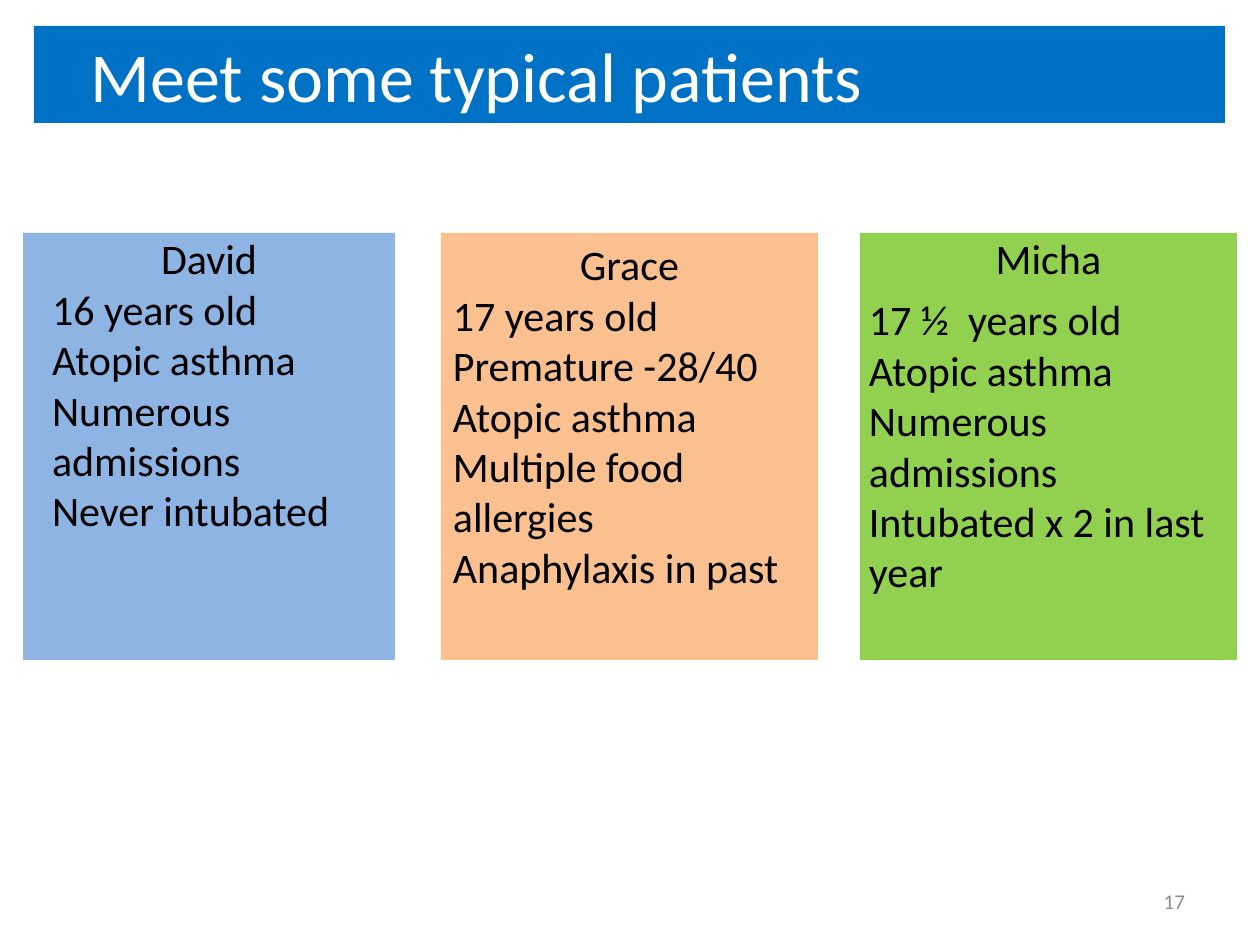
"""Build a slide with a title bar and three patient cards."""
from pptx import Presentation
from pptx.dml.color import RGBColor
from pptx.enum.shapes import MSO_SHAPE
from pptx.enum.text import MSO_ANCHOR, PP_ALIGN
from pptx.util import Pt

RECT = MSO_SHAPE.RECTANGLE
TOP, MIDDLE = MSO_ANCHOR.TOP, MSO_ANCHOR.MIDDLE
LEFT, CENTER, RIGHT = PP_ALIGN.LEFT, PP_ALIGN.CENTER, PP_ALIGN.RIGHT


def px(n):
    return round(n * 914400 / 126)


def add_box(s, box, fill, anchor, inset, lines, size, color):
    sp = s.shapes.add_shape(RECT, *[px(n) for n in box])
    sp.shadow.inherit = False
    sp.line.fill.background()
    if fill:
        sp.fill.solid()
        sp.fill.fore_color.rgb = RGBColor.from_string(fill)
    else:
        sp.fill.background()
    tf = sp.text_frame
    tf.word_wrap = True
    tf.vertical_anchor = anchor
    tf.margin_left = tf.margin_right = px(2 * inset)
    tf.margin_top = tf.margin_bottom = px(inset)
    for i, (text, align, indent, after) in enumerate(lines):
        p = tf.add_paragraph() if i else tf.paragraphs[0]
        p.alignment = align
        p.space_after = Pt(after)
        p._p.get_or_add_pPr().set("marL", str(px(indent)))
        r = p.add_run()
        r.text = text
        r.font.name = "Calibri"
        r.font.size = Pt(size)
        r.font.color.rgb = RGBColor.from_string(color)


prs = Presentation()
prs.slide_width, prs.slide_height = px(1260), px(945)
s = prs.slides.add_slide(prs.slide_layouts[6])

add_box(s, (34, 26, 1191, 97), "0072C6", MIDDLE, 6,
        [("Meet some typical patients", LEFT, 45, 0)], 40, "FFFFFF")
add_box(s, (903, 876, 294, 50), None, MIDDLE, 6,
        [("17", RIGHT, 0, 0)], 12, "8C8C8C")

cards = [
    (23, 372, "8EB4E3", 0, 29, 0, "David",
     ["16 years old", "Atopic asthma", "Numerous", "admissions",
      "Never intubated"]),
    (441, 377, "FAC090", 6, 0, 0, "Grace",
     ["17 years old", "Premature -28/40", "Atopic asthma",
      "Multiple food allergies", "Anaphylaxis in past"]),
    (860, 377, "92D050", 0, 9, 6, "Micha",
     ["17 ½  years old", "Atopic asthma", "Numerous", "admissions",
      "Intubated x 2 in last", "year"]),
]
for x, w, fill, inset, indent, after, name, facts in cards:
    lines = [(name, CENTER, 0, after)]
    lines += [(fact, LEFT, indent, 0) for fact in facts]
    add_box(s, (x, 233, w, 427), fill, TOP, inset, lines, 24, "000000")

prs.save("out.pptx")
